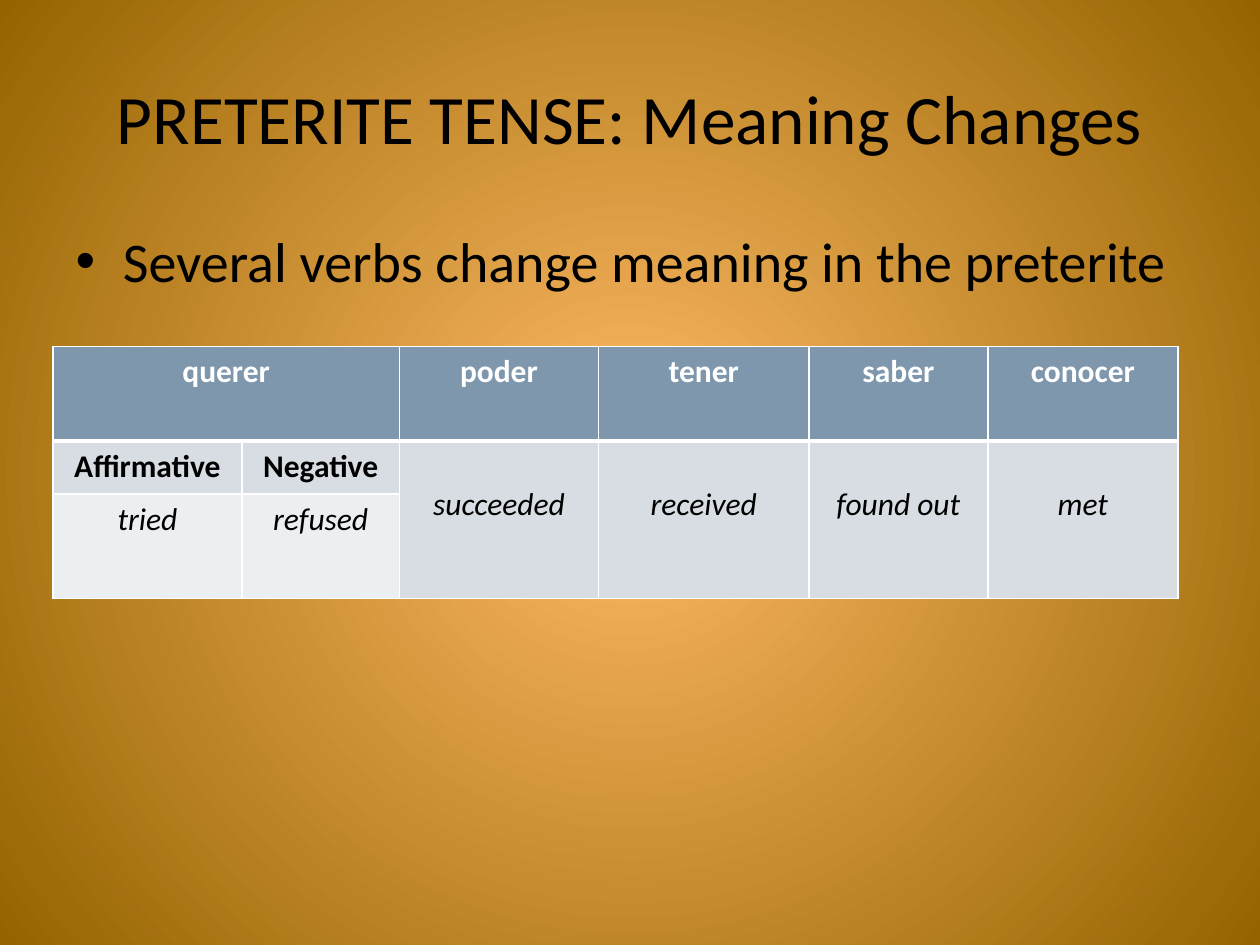
import pptx
import pptx.dml.color
import pptx.enum.text
import pptx.oxml
import pptx.oxml.ns
import pptx.util
from pptx.util import Inches

FONT = "Calibri"
TITLE = "PRETERITE TENSE: Meaning Changes"
BULLET = "Several verbs change meaning in the preterite"
GRADIENT = [(0, "FFBA65"), (1, "956400")]
COLUMN_WIDTHS = [1.5, 1.25, 1.58, 1.67, 1.42, 1.51]
ROWS = [
    (0.75, "7E97AD", ["querer", "", "poder", "tener", "saber", "conocer"]),
    (0.42, "D8DDE3", ["Affirmative", "Negative", "succeeded", "received", "found out", "met"]),
    (0.83, "ECEFF1", ["tried", "refused", "", "", "", ""]),
]
VERB_COLUMNS = range(2, 6)


def color(hex_value):
    return pptx.dml.color.RGBColor.from_string(hex_value)


def add_run(paragraph, text, size, hex_value, bold=False, italic=False):
    run = paragraph.add_run()
    run.text = text
    run.font.name = FONT
    run.font.size = pptx.util.Pt(size)
    run.font.bold = bold
    run.font.italic = italic
    run.font.color.rgb = color(hex_value)


def fill_placeholder(placeholder, box, text, size):
    placeholder.left, placeholder.top, placeholder.width, placeholder.height = map(Inches, box)
    placeholder.text_frame.auto_size = pptx.enum.text.MSO_AUTO_SIZE.NONE
    add_run(placeholder.text_frame.paragraphs[0], text, size, "000000")


def paint_background(slide):
    fill = slide.background.fill
    fill.gradient()
    for stop, (position, hex_value) in zip(fill.gradient_stops, GRADIENT):
        stop.position = position
        stop.color.rgb = color(hex_value)
    gradient = next(slide.element.iter(pptx.oxml.ns.qn("a:gradFill")))
    gradient.remove(gradient.find(pptx.oxml.ns.qn("a:lin")))
    gradient.append(pptx.oxml.parse_xml(
        f'<a:path {pptx.oxml.ns.nsdecls("a")} path="circle">'
        '<a:fillToRect l="50000" t="50000" r="50000" b="50000"/></a:path>'))


def set_borders(cell, widths):
    properties = cell._tc.get_or_add_tcPr()
    for index, (side, width) in enumerate(widths.items()):
        properties.insert(index, pptx.oxml.parse_xml(
            f'<a:ln{side} {pptx.oxml.ns.nsdecls("a")} w="{pptx.util.Pt(width)}">'
            '<a:solidFill><a:srgbClr val="FFFFFF"/></a:solidFill>'
            f'</a:ln{side}>'))


def add_verb_table(slide):
    frame = slide.shapes.add_table(
        len(ROWS), len(COLUMN_WIDTHS), Inches(0.42), Inches(2.75),
        Inches(sum(COLUMN_WIDTHS)), Inches(sum(row[0] for row in ROWS)))
    table = frame.table
    for column, width in zip(table.columns, COLUMN_WIDTHS):
        column.width = Inches(width)
    for row_index, (height, fill, texts) in enumerate(ROWS):
        table.rows[row_index].height = Inches(height)
        for column_index, text in enumerate(texts):
            cell = table.cell(row_index, column_index)
            cell.fill.solid()
            cell.fill.fore_color.rgb = color(fill)
            set_borders(cell, {"L": 1, "R": 1,
                               "T": 3 if row_index == 1 else 1,
                               "B": 3 if row_index == 0 else 1})
            if not text:
                continue
            paragraph = cell.text_frame.paragraphs[0]
            paragraph.alignment = pptx.enum.text.PP_ALIGN.CENTER
            meaning = row_index == 2 or (row_index == 1 and column_index in VERB_COLUMNS)
            add_run(paragraph, text, 18, "FFFFFF" if row_index == 0 else "000000",
                    bold=not meaning, italic=meaning)
    table.cell(0, 0).merge(table.cell(0, 1))
    for column_index in VERB_COLUMNS:
        cell = table.cell(1, column_index)
        cell.merge(table.cell(2, column_index))
        cell.margin_top = Inches(0.35)


def main():
    presentation = pptx.Presentation()
    presentation.slide_width = Inches(10)
    presentation.slide_height = Inches(7.5)
    slide = presentation.slides.add_slide(presentation.slide_layouts[1])
    paint_background(slide)
    fill_placeholder(slide.shapes.title, (0.5, 0.3, 9, 1.25), TITLE, 39.6)
    fill_placeholder(slide.placeholders[1], (0.5, 1.75, 9, 4.95), BULLET, 32)
    add_verb_table(slide)
    presentation.save("out.pptx")


if __name__ == "__main__":
    main()
